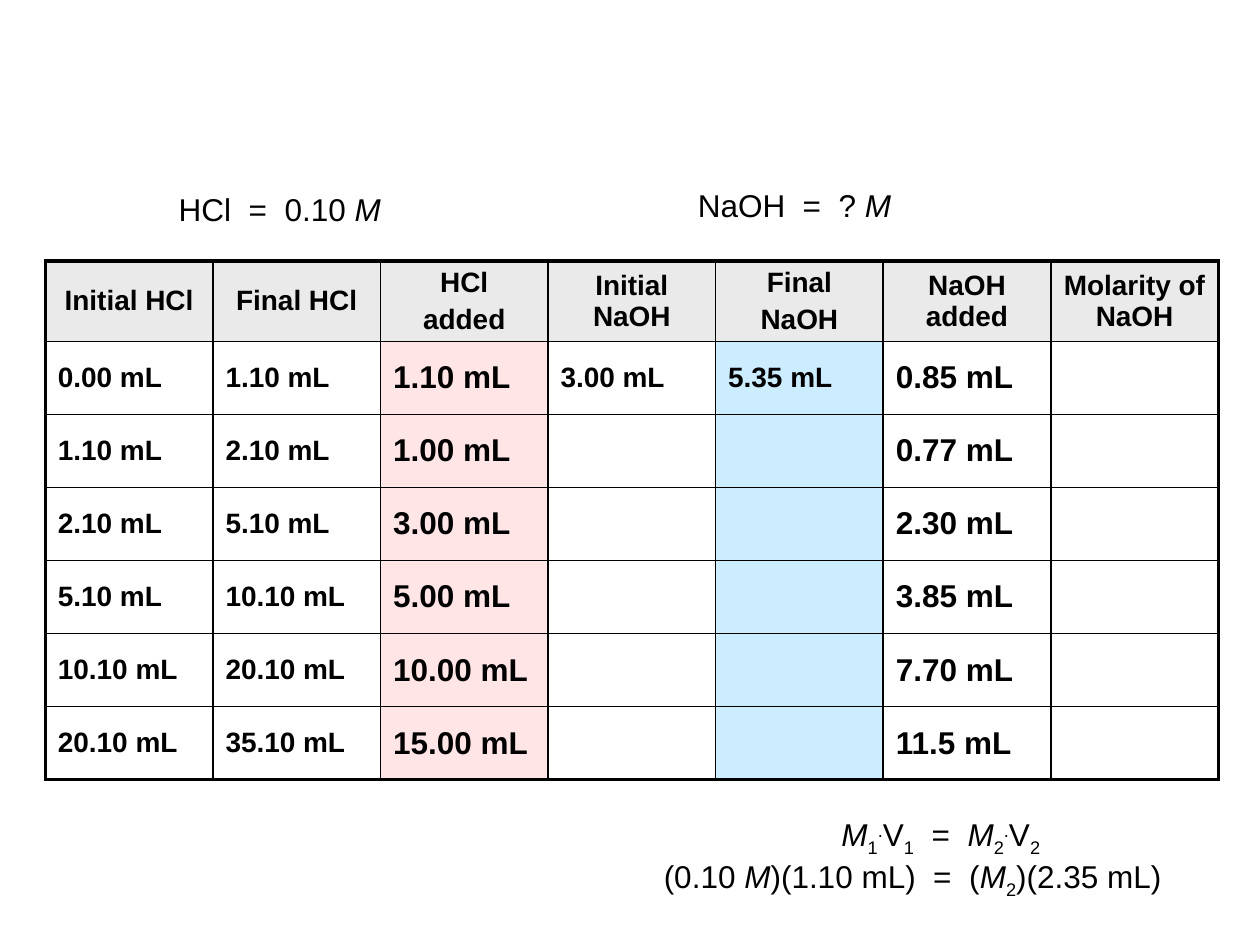
from lxml import etree
from pptx import Presentation
from pptx.dml.color import RGBColor
from pptx.enum.text import MSO_ANCHOR, MSO_AUTO_SIZE, PP_ALIGN
from pptx.oxml.ns import qn
from pptx.util import Inches, Pt

MIDDLE, CENTER, LEFT = MSO_ANCHOR.MIDDLE, PP_ALIGN.CENTER, PP_ALIGN.LEFT
FIT_SHAPE = MSO_AUTO_SIZE.SHAPE_TO_FIT_TEXT

FONT = "Arial"
COLORS = {"ink": "000000", "header": "EAEAEA", "acid": "FFE5E5", "base": "CCECFF"}
BLANK_LAYOUT = 6

HEADERS = ["Initial HCl", "Final HCl", "HCl\nadded", "Initial NaOH",
           "Final\nNaOH", "NaOH added", "Molarity of NaOH"]
READINGS = [
    ["0.00 mL", "1.10 mL", "1.10 mL", "3.00 mL", "5.35 mL", "0.85 mL", ""],
    ["1.10 mL", "2.10 mL", "1.00 mL", "", "", "0.77 mL", ""],
    ["2.10 mL", "5.10 mL", "3.00 mL", "", "", "2.30 mL", ""],
    ["5.10 mL", "10.10 mL", "5.00 mL", "", "", "3.85 mL", ""],
    ["10.10 mL", "20.10 mL", "10.00 mL", "", "", "7.70 mL", ""],
    ["20.10 mL", "35.10 mL", "15.00 mL", "", "", "11.5 mL", ""],
]
COLUMN_FILLS = {2: "acid", 4: "base"}
ADDED_COLUMNS = (2, 5)

# Left, top, width, then runs of (text, style)
FORMULAS = [
    (6.58, 6.42, 1.84, [
        ("M", "italic"), ("1", "sub"), (".", "super"), ("V", ""), ("1", "sub"),
        ("  =  ", ""),
        ("M", "italic"), ("2", "sub"), (".", "super"), ("V", ""), ("2", "sub")]),
    (5.17, 6.75, 4.16, [
        ("(0.10 ", ""), ("M", "italic"), (")(1.10 mL)  =  (", ""),
        ("M", "italic"), ("2", "sub"), (")(2.35 mL)", "")]),
    (1.32, 1.46, 1.81, [("HCl  =  0.10 ", ""), ("M", "italic")]),
    (5.44, 1.43, 1.74, [("NaOH  =  ?", ""), (" M", "italic")]),
]
BASELINES = {"sub": "-25000", "super": "30000"}

TABLE_LEFT, TABLE_TOP = 0.36, 2.07
COLUMN_WIDTH, ROW_HEIGHT = 1.33, 0.58
FORMULA_HEIGHT = 0.4
INNER_LINE, OUTER_LINE = 1, 2.25
TEXT_SIZE, ADDED_SIZE = 16, 18


def rgb(name):
    return RGBColor.from_string(COLORS[name])


def style_font(font, size):
    font.name, font.size = FONT, Pt(size)
    font.color.rgb = rgb("ink")


def add_border(cell, side, width):
    line = etree.SubElement(cell._tc.get_or_add_tcPr(), qn(f"a:ln{side}"),
                            w=str(Pt(width)))
    fill = etree.SubElement(line, qn("a:solidFill"))
    etree.SubElement(fill, qn("a:srgbClr"), val=COLORS["ink"])


def fill_cell(cell, text, row, column, last_row, last_column):
    outer_sides = {"L": column == 0, "R": column == last_column,
                   "T": row == 0, "B": row == last_row}
    for side, is_outer in outer_sides.items():
        add_border(cell, side, OUTER_LINE if is_outer else INNER_LINE)

    fill_name = "header" if row == 0 else COLUMN_FILLS.get(column)
    if fill_name:
        cell.fill.solid()
        cell.fill.fore_color.rgb = rgb(fill_name)
    else:
        cell.fill.background()

    size = ADDED_SIZE if row and column in ADDED_COLUMNS else TEXT_SIZE
    cell.vertical_anchor = MIDDLE
    cell.text_frame.text = text
    for paragraph in cell.text_frame.paragraphs:
        paragraph.alignment = LEFT if row else CENTER
        paragraph.space_before = Pt(0.2 * size)
        for run in paragraph.runs:
            style_font(run.font, size)
            run.font.bold = True


def add_titration_table(slide):
    rows = [HEADERS] + READINGS
    row_count, column_count = len(rows), len(HEADERS)
    table = slide.shapes.add_table(
        row_count, column_count, Inches(TABLE_LEFT), Inches(TABLE_TOP),
        Inches(COLUMN_WIDTH * column_count), Inches(ROW_HEIGHT * row_count)).table
    table.first_row = table.horz_banding = False
    for r, texts in enumerate(rows):
        for c, text in enumerate(texts):
            fill_cell(table.cell(r, c), text, r, c, row_count - 1, column_count - 1)


def add_formula(slide, left, top, width, parts):
    frame = slide.shapes.add_textbox(Inches(left), Inches(top), Inches(width),
                                     Inches(FORMULA_HEIGHT)).text_frame
    frame.word_wrap = False
    frame.auto_size = FIT_SHAPE
    for text, style in parts:
        run = frame.paragraphs[0].add_run()
        run.text = text
        style_font(run.font, 18)
        run.font.italic = style == "italic"
        if style in BASELINES:
            run._r.get_or_add_rPr().set("baseline", BASELINES[style])


def main():
    presentation = Presentation()
    presentation.slide_width, presentation.slide_height = Inches(10), Inches(7.5)
    slide = presentation.slides.add_slide(presentation.slide_layouts[BLANK_LAYOUT])
    add_titration_table(slide)
    for formula in FORMULAS:
        add_formula(slide, *formula)
    presentation.save("out.pptx")


if __name__ == "__main__":
    main()
